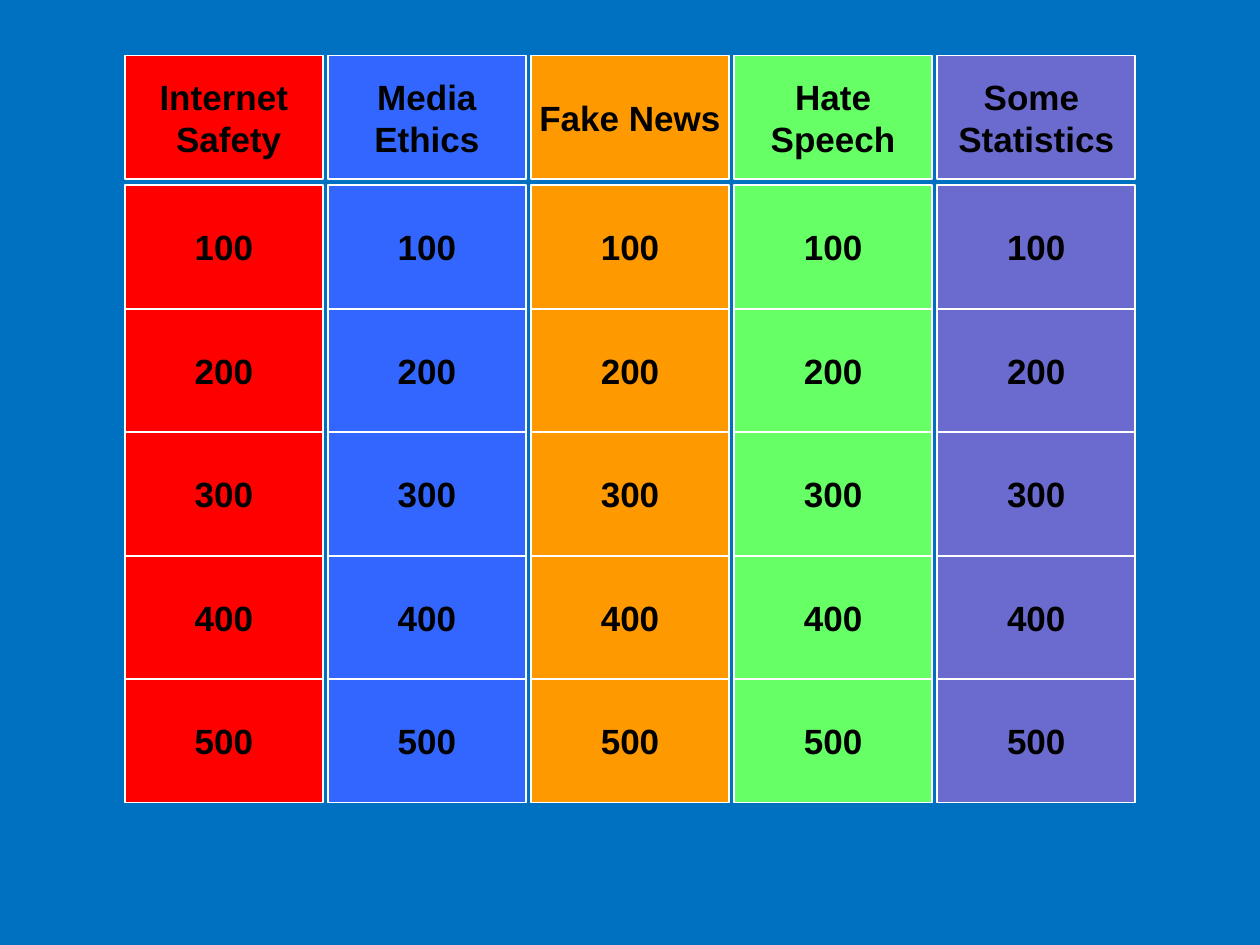
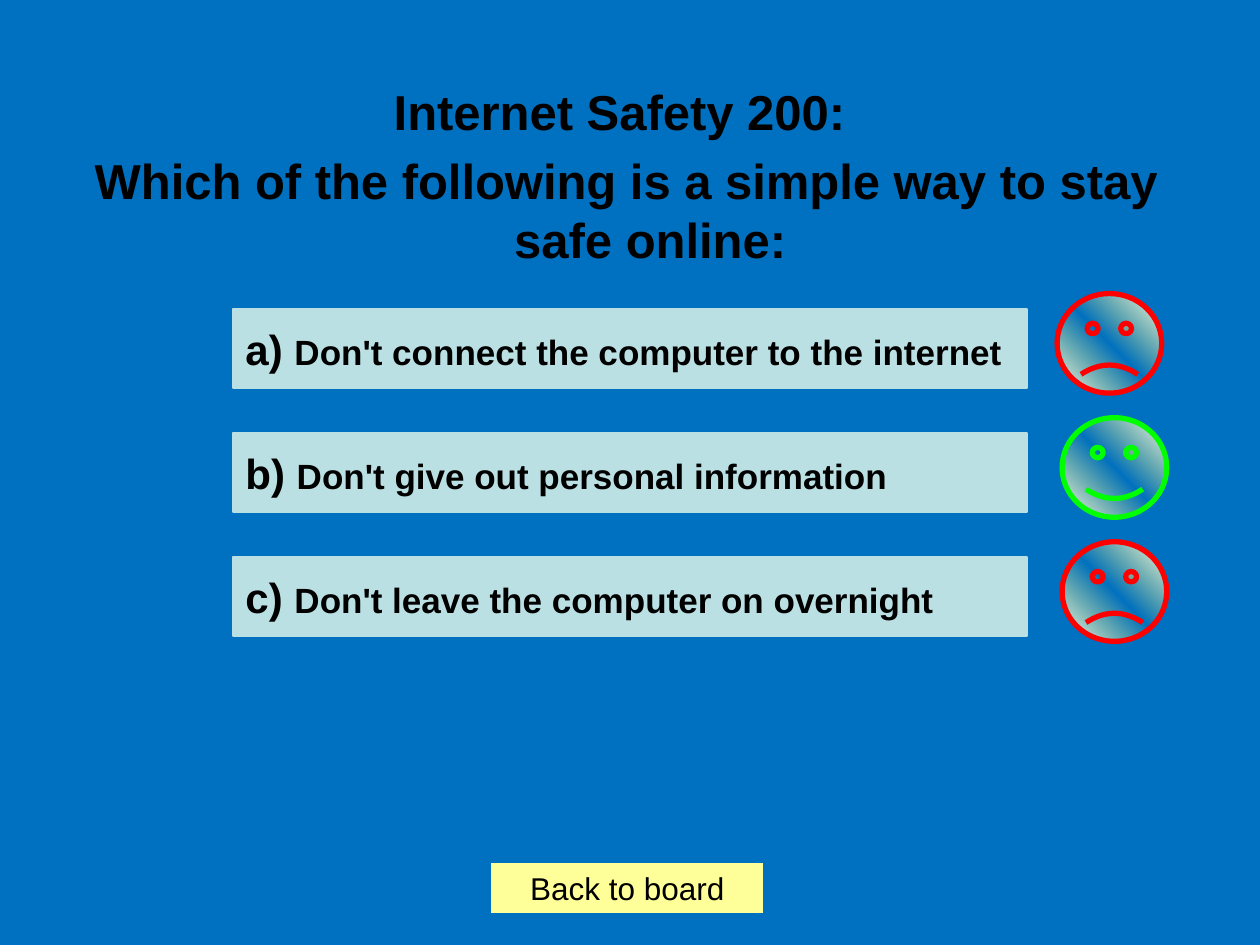
from lxml import etree
from pptx import Presentation
from pptx import util as u
from pptx.dml.color import RGBColor
from pptx.enum import shapes, text
from pptx.oxml import parse_xml
from pptx.oxml.ns import nsdecls, qn

# Shared look
FONT = "Arial"
BACKGROUND, INK, WHITE = "0070C0", "000000", "FFFFFF"
ANSWER_FILL, BUTTON_FILL = "BBE0E3", "FFFF99"
WRONG, RIGHT = "FF0000", "00FF00"
BUTTON = shapes.MSO_SHAPE.ACTION_BUTTON_CUSTOM
CENTER, LEFT = text.PP_ALIGN.CENTER, text.PP_ALIGN.LEFT

# Board grid, in inches
BOARD_LEFT, BOARD_WIDTH, COLUMN_GAP = 0.99, 8.02, 0.04
HEADER_TOP, FIRST_ROW_TOP, ROW_HEIGHT = 0.44, 1.47, 0.98
CATEGORIES = [
    (["Internet", " Safety"], "FF0000"),
    (["Media", "Ethics"], "3366FF"),
    (["Fake News"], "FF9900"),
    (["Hate", "Speech"], "66FF66"),
    (["Some ", "Statistics"], "6B6BCF"),
]
POINTS = [100, 200, 300, 400, 500]

# Question: letter, answer, face colour, face left, mouth curve
ANSWERS = [
    ("a) ", "Don't connect the computer to the internet", WRONG, 8.39, -0.047),
    ("b) ", "Don't give out personal information", RIGHT, 8.43, 0.047),
    ("c) ", "Don't leave the computer on overnight", WRONG, 8.43, -0.047),
]
ANSWER_TOP, FACE_TOP, ANSWER_PITCH = 2.45, 2.33, 0.985


def color(value):
    return RGBColor.from_string(value)


def write(frame, lines, size=20, bold=True, align=CENTER):
    """Each line is a string or a list of (string, size) pairs."""
    for index, line in enumerate(lines):
        paragraph = frame.paragraphs[0] if index == 0 else frame.add_paragraph()
        paragraph.alignment = align
        for words, run_size in [(line, size)] if isinstance(line, str) else line:
            run = paragraph.add_run()
            run.text = words
            run.font.name = FONT
            run.font.size = u.Pt(run_size)
            run.font.bold = bold
            run.font.color.rgb = color(INK)


def add_shape(slide, kind, box, line=None, line_width=1):
    shape = slide.shapes.add_shape(kind, *map(u.Inches, box))
    shape.shadow.inherit = False
    if line:
        shape.line.color.rgb = color(line)
        shape.line.width = u.Pt(line_width)
    else:
        shape.line.fill.background()
    return shape


def add_button(slide, box, lines, fill, line=None, **text_format):
    shape = add_shape(slide, BUTTON, box, line)
    shape.fill.solid()
    shape.fill.fore_color.rgb = color(fill)
    shape.text_frame.word_wrap = False
    shape.text_frame.vertical_anchor = text.MSO_ANCHOR.MIDDLE
    write(shape.text_frame, lines, **text_format)


def add_face(slide, box, line, mouth):
    face = add_shape(slide, shapes.MSO_SHAPE.SMILEY_FACE, box, line, 3)
    face.adjustments[0] = mouth
    # Diagonal gradient that is clear in the middle
    gradient = parse_xml(
        f'<a:gradFill {nsdecls("a")} rotWithShape="1"><a:gsLst>'
        '<a:gs pos="0"><a:srgbClr val="FFFFFF"/></a:gs>'
        '<a:gs pos="50000"><a:srgbClr val="FFFF66"><a:alpha val="0"/></a:srgbClr></a:gs>'
        '<a:gs pos="100000"><a:srgbClr val="FFFFFF"/></a:gs>'
        '</a:gsLst><a:lin ang="18900000" scaled="1"/></a:gradFill>')
    face.element.spPr.find(qn("a:prstGeom")).addnext(gradient)


def add_question(slide, box, lines):
    title, body = slide.placeholders[0], slide.placeholders[1]
    title.element.getparent().remove(title.element)
    body.left, body.top, body.width, body.height = map(u.Inches, box)
    frame = body.text_frame
    frame.auto_size = text.MSO_AUTO_SIZE.NONE
    write(frame, lines, size=28)
    for paragraph in frame.paragraphs:
        paragraph.space_before = u.Pt(5.6)
        properties = paragraph._p.get_or_add_pPr()
        properties.set("marL", str(u.Inches(0.38)))
        properties.set("indent", str(-u.Inches(0.38)))
        etree.SubElement(properties, qn("a:buNone"))


def build_board(slide):
    count = len(CATEGORIES)
    width = (BOARD_WIDTH - (count - 1) * COLUMN_GAP) / count
    for column, (name, fill) in enumerate(CATEGORIES):
        left = BOARD_LEFT + column * (width + COLUMN_GAP)
        for row, points in enumerate(POINTS):
            top = FIRST_ROW_TOP + row * ROW_HEIGHT
            add_button(slide, (left, top, width, ROW_HEIGHT), [str(points)], fill, WHITE)
        add_button(slide, (left, HEADER_TOP, width, ROW_HEIGHT), name, fill, WHITE)


def build_question(slide):
    add_question(slide, (0.47, 0.6, 9, 1.18), [
        "Internet Safety 200: ",
        "Which of the following is a simple way to stay safe online:",
    ])
    add_button(slide, (3.9, 6.85, 2.16, 0.4), ["Back to board"], BUTTON_FILL,
               size=18, bold=False)
    for row, (letter, answer, line, face_left, mouth) in enumerate(ANSWERS):
        drop = row * ANSWER_PITCH
        add_button(slide, (1.85, ANSWER_TOP + drop, 6.3, 0.63),
                   [[(letter, 24), (answer, 20)]], ANSWER_FILL, ANSWER_FILL, align=LEFT)
        add_face(slide, (face_left, FACE_TOP + drop, 0.83, 0.79), line, mouth)


def main():
    presentation = Presentation()
    presentation.slide_width, presentation.slide_height = u.Inches(10), u.Inches(7.5)
    background = presentation.slide_master.background.fill
    background.solid()
    background.fore_color.rgb = color(BACKGROUND)

    layouts = presentation.slide_layouts
    build_board(presentation.slides.add_slide(layouts.get_by_name("Blank")))
    build_question(presentation.slides.add_slide(layouts.get_by_name("Title and Content")))
    presentation.save("out.pptx")


if __name__ == "__main__":
    main()
